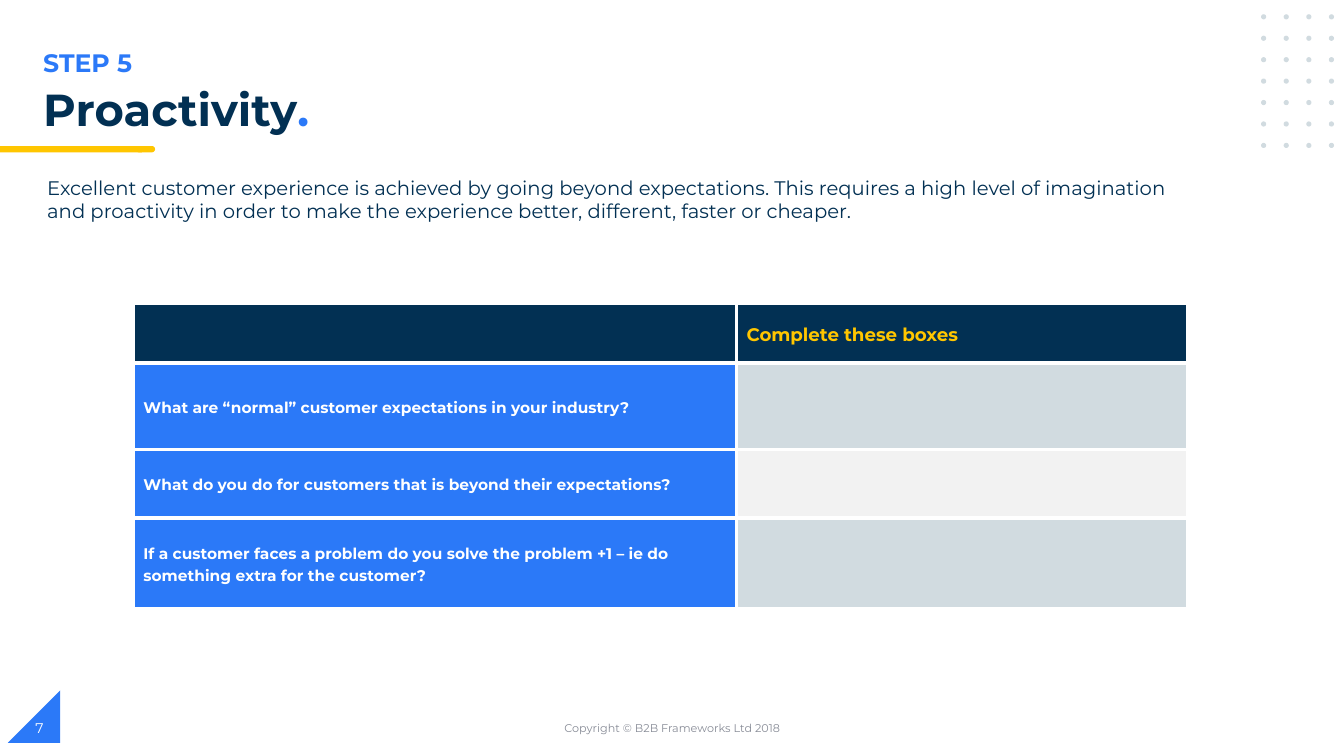
from itertools import product

from lxml.etree import SubElement
from pptx import Presentation
from pptx.dml.color import RGBColor
from pptx.enum.shapes import MSO_SHAPE
from pptx.enum.text import MSO_ANCHOR, PP_ALIGN
from pptx.oxml.ns import qn
from pptx.util import Cm, Pt

COLOURS = {"navy": "023053", "blue": "2B79F8", "yellow": "FFC600", "mist": "D1DBE0",
           "pale": "F2F2F2", "grey": "888C97", "white": "FFFFFF"}


class Deck:
    """Holds the style and the current slide."""

    font_name = "Montserrat"

    def __init__(self, width, height):
        self.presentation = Presentation()
        self.presentation.slide_width = Cm(width)
        self.presentation.slide_height = Cm(height)
        self.slide = self.presentation.slides.add_slide(self.presentation.slide_layouts[6])

    def colour(self, name):
        return RGBColor.from_string(COLOURS[name])

    def paint(self, target, colour):
        target.fill.solid()
        target.fill.fore_color.rgb = self.colour(colour)

    def shape(self, preset, box, colour):
        shape = self.slide.shapes.add_shape(preset, *map(Cm, box))
        shape.shadow.inherit = False
        self.paint(shape, colour)
        shape.line.fill.background()
        return shape

    def paragraph(self, frame, parts, size, bold=False, spacing=1.0, align=PP_ALIGN.LEFT):
        """Fill the first paragraph from (text, colour) parts."""
        paragraph = frame.paragraphs[0]
        paragraph.line_spacing = spacing
        paragraph.alignment = align
        formats = {"name": self.font_name, "size": Pt(size), "bold": bold}
        for text, colour in parts:
            run = paragraph.add_run()
            run.text = text
            for attribute, value in formats.items():
                setattr(run.font, attribute, value)
            run.font.color.rgb = self.colour(colour)

    def text(self, box, parts, size, anchor=MSO_ANCHOR.TOP, **style):
        frame = self.slide.shapes.add_textbox(*map(Cm, box)).text_frame
        frame.word_wrap = True
        frame.vertical_anchor = anchor
        self.paragraph(frame, parts, size, **style)

    def border(self, cell, colour, width):
        properties = cell._tc.get_or_add_tcPr()
        for side in ("lnL", "lnR", "lnT", "lnB"):
            line = SubElement(properties, qn(f"a:{side}"), w=str(Pt(width)))
            fill = SubElement(line, qn("a:solidFill"))
            SubElement(fill, qn("a:srgbClr"), val=COLOURS[colour])

    def table(self, left, top, widths, heights, rows):
        """Draw rows of cells, each (text, fill, text colour, size)."""
        table = self.slide.shapes.add_table(
            len(heights), len(widths), Cm(left), Cm(top),
            Cm(sum(widths)), Cm(sum(heights))).table
        table.first_row = table.horz_banding = False
        for column, width in zip(table.columns, widths):
            column.width = Cm(width)
        for row, height, contents in zip(table.rows, heights, rows):
            row.height = Cm(height)
            for cell, (text, fill, colour, size) in zip(row.cells, contents):
                self.border(cell, "white", 3)
                self.paint(cell, fill)
                cell.margin_top = cell.margin_bottom = 0
                cell.vertical_anchor = MSO_ANCHOR.MIDDLE
                if text:
                    self.paragraph(cell.text_frame, [(text, colour)], size,
                                   bold=True, spacing=1.15)

    def save(self):
        self.presentation.save("out.pptx")


def main():
    deck = Deck(33.87, 19.05)

    page_corner = deck.shape(MSO_SHAPE.RIGHT_TRIANGLE, (0.2, 17.4, 1.32, 1.32), "blue")
    page_corner.element.spPr.xfrm.set("flipH", "1")
    deck.shape(MSO_SHAPE.FLOWCHART_TERMINATOR, (3.42, 3.68, 0.49, 0.16), "yellow")
    deck.shape(MSO_SHAPE.RECTANGLE, (0, 3.68, 3.58, 0.16), "yellow")
    for row, column in product(range(7), range(4)):
        deck.shape(MSO_SHAPE.OVAL,
                   (31.78 + 0.57 * column, 0.36 + 0.54 * row, 0.13, 0.13), "mist")

    deck.text((0.84, 1.07, 17, 1.02), [("STEP 5", "blue")], 18, bold=True)
    deck.text((0.84, 2.08, 26.3, 1.42), [("Proactivity", "navy"), (".", "blue")], 32,
              bold=True, spacing=0.9)
    deck.text((0.94, 4.3, 29.4, 1.45),
              [("Excellent customer experience is achieved by going beyond expectations. "
                "This requires a high level of imagination and proactivity in order to make "
                "the experience better, different, faster or cheaper.", "navy")], 14)

    questions = [
        ("What are “normal” customer expectations in your industry?", "mist"),
        ("What do you do for customers that is beyond their expectations?", "pale"),
        ("If a customer faces a problem do you solve the problem +1 – ie do "
         "something extra for the customer?", "mist"),
    ]
    header = [("", "navy", "white", 13), ("Complete these boxes", "navy", "yellow", 13)]
    answers = [[(question, "blue", "white", 11), ("", answer_fill, "navy", 11)]
               for question, answer_fill in questions]
    deck.table(3.36, 7.65, [15.2, 11.38], [1.5, 2.18, 1.73, 2.29], [header, *answers])

    deck.text((11.23, 17.83, 11.43, 1.02), [("Copyright © B2B Frameworks Ltd 2018", "grey")], 8,
              anchor=MSO_ANCHOR.MIDDLE, align=PP_ALIGN.CENTER)
    deck.text((0.64, 17.83, 7.62, 1.02), [("7", "white")], 10, anchor=MSO_ANCHOR.MIDDLE)
    deck.save()


if __name__ == "__main__":
    main()
